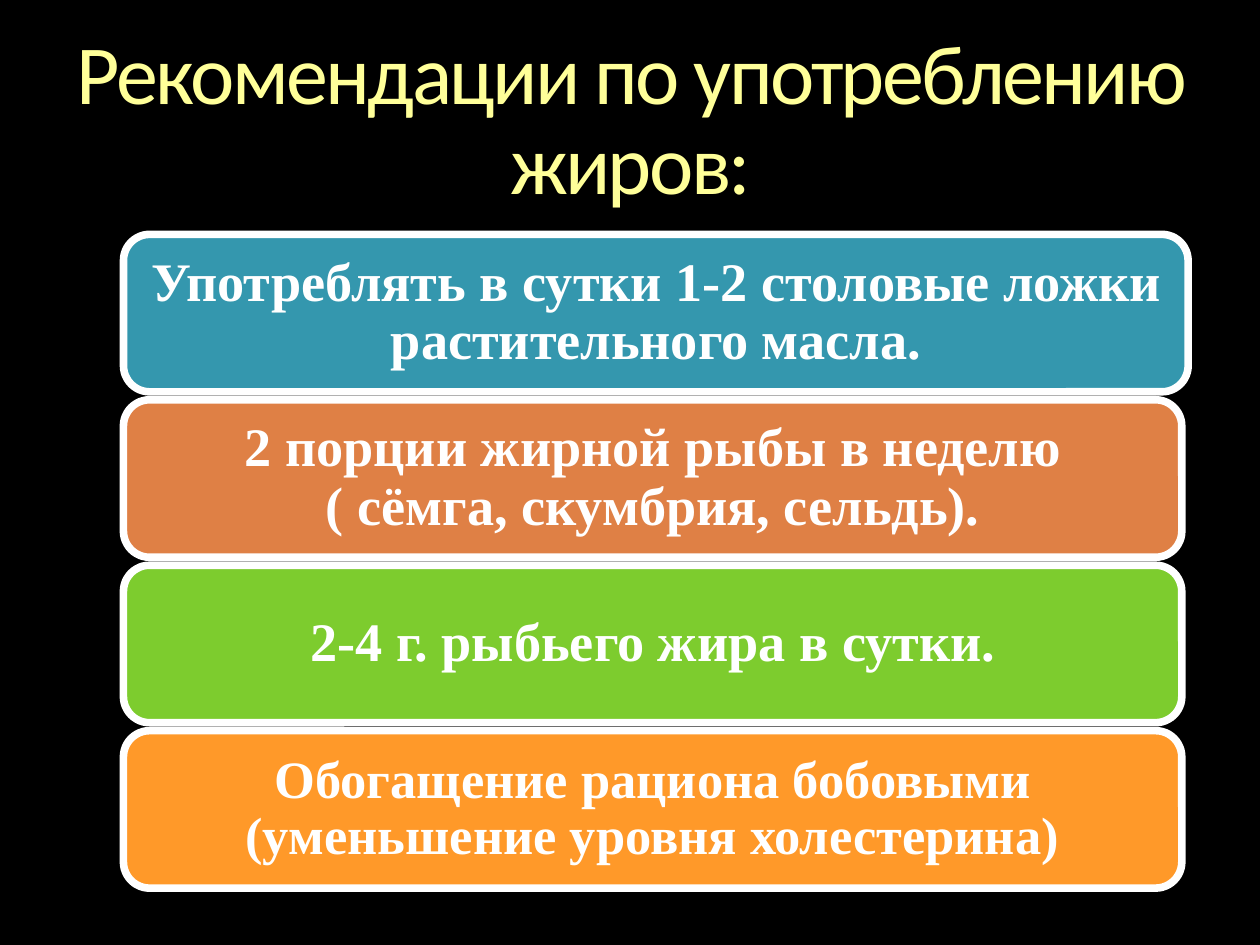
import dataclasses

import pptx
import pptx.dml.color
import pptx.enum.shapes
import pptx.enum.text
import pptx.util

Inches = pptx.util.Inches
Pt = pptx.util.Pt
RGBColor = pptx.dml.color.RGBColor

BLACK = RGBColor(0x00, 0x00, 0x00)
WHITE = RGBColor(0xFF, 0xFF, 0xFF)
PALE_YELLOW = RGBColor(0xFF, 0xFF, 0x99)
TEAL = RGBColor(0x34, 0x97, 0xAE)
TERRACOTTA = RGBColor(0xDF, 0x80, 0x45)
GREEN = RGBColor(0x7D, 0xCC, 0x2E)
ORANGE = RGBColor(0xFF, 0x99, 0x29)

BAR_LEFT = 0.98
FIRST_BAR_TOP = 1.86
BAR_HEIGHT = 1.25
BAR_STEP = 1.313


@dataclasses.dataclass(frozen=True)
class Advice:
    text: str
    fill: RGBColor
    width: float = 8.4
    size: float = 31


ADVICE = [
    Advice("Употреблять в сутки 1-2 столовые ложки растительного масла.", TEAL, width=8.45),
    Advice("2 порции жирной рыбы в неделю ( сёмга, скумбрия, сельдь).", TERRACOTTA),
    Advice("2-4 г. рыбьего жира в сутки.", GREEN),
    Advice("Обогащение рациона бобовыми (уменьшение уровня холестерина)", ORANGE, size=30),
]


def write_centred(frame, text: str, font_name: str, size: float, colour: RGBColor, bold: bool):
    """Fill the first paragraph of the frame and return its run."""
    para = frame.paragraphs[0]
    para.alignment = pptx.enum.text.PP_ALIGN.CENTER
    para.line_spacing = 0.9
    span = para.add_run()
    span.text = text
    span.font.name = font_name
    span.font.size = Pt(size)
    span.font.bold = bold
    span.font.color.rgb = colour
    return span


def set_margins(frame, horizontal: float, vertical: float) -> None:
    frame.margin_left = frame.margin_right = Inches(horizontal)
    frame.margin_top = frame.margin_bottom = Inches(vertical)


def add_title(page, text: str) -> None:
    title = page.shapes.title
    title.left, title.top = Inches(0.42), Inches(0.25)
    title.width, title.height = Inches(9.17), Inches(1.45)
    frame = title.text_frame
    frame.word_wrap = True
    frame.auto_size = pptx.enum.text.MSO_AUTO_SIZE.NONE
    frame.vertical_anchor = pptx.enum.text.MSO_ANCHOR.TOP
    set_margins(frame, 0, 0)
    span = write_centred(frame, text, "Calibri", 48, PALE_YELLOW, bold=False)
    span.font._element.set("spc", "-150")


def add_advice_bar(page, advice: Advice, top: float) -> None:
    bar = page.shapes.add_shape(
        pptx.enum.shapes.MSO_SHAPE.ROUNDED_RECTANGLE,
        Inches(BAR_LEFT), Inches(top), Inches(advice.width), Inches(BAR_HEIGHT),
    )
    bar.shadow.inherit = False
    bar.fill.solid()
    bar.fill.fore_color.rgb = advice.fill
    bar.line.color.rgb = WHITE
    bar.line.width = Pt(4.33)
    frame = bar.text_frame
    frame.word_wrap = True
    frame.vertical_anchor = pptx.enum.text.MSO_ANCHOR.MIDDLE
    # The rounded corners already inset the text area by 0.06 inches.
    set_margins(frame, 0.13, 0.06)
    write_centred(frame, advice.text, "Times New Roman", advice.size, WHITE, bold=True)


def main() -> None:
    deck = pptx.Presentation()
    deck.slide_width, deck.slide_height = Inches(10), Inches(7.5)
    page = deck.slides.add_slide(deck.slide_layouts[5])
    page.background.fill.solid()
    page.background.fill.fore_color.rgb = BLACK
    add_title(page, "Рекомендации по употреблению жиров:")
    for index, advice in enumerate(ADVICE):
        add_advice_bar(page, advice, FIRST_BAR_TOP + index * BAR_STEP)
    deck.save("out.pptx")


if __name__ == "__main__":
    main()
